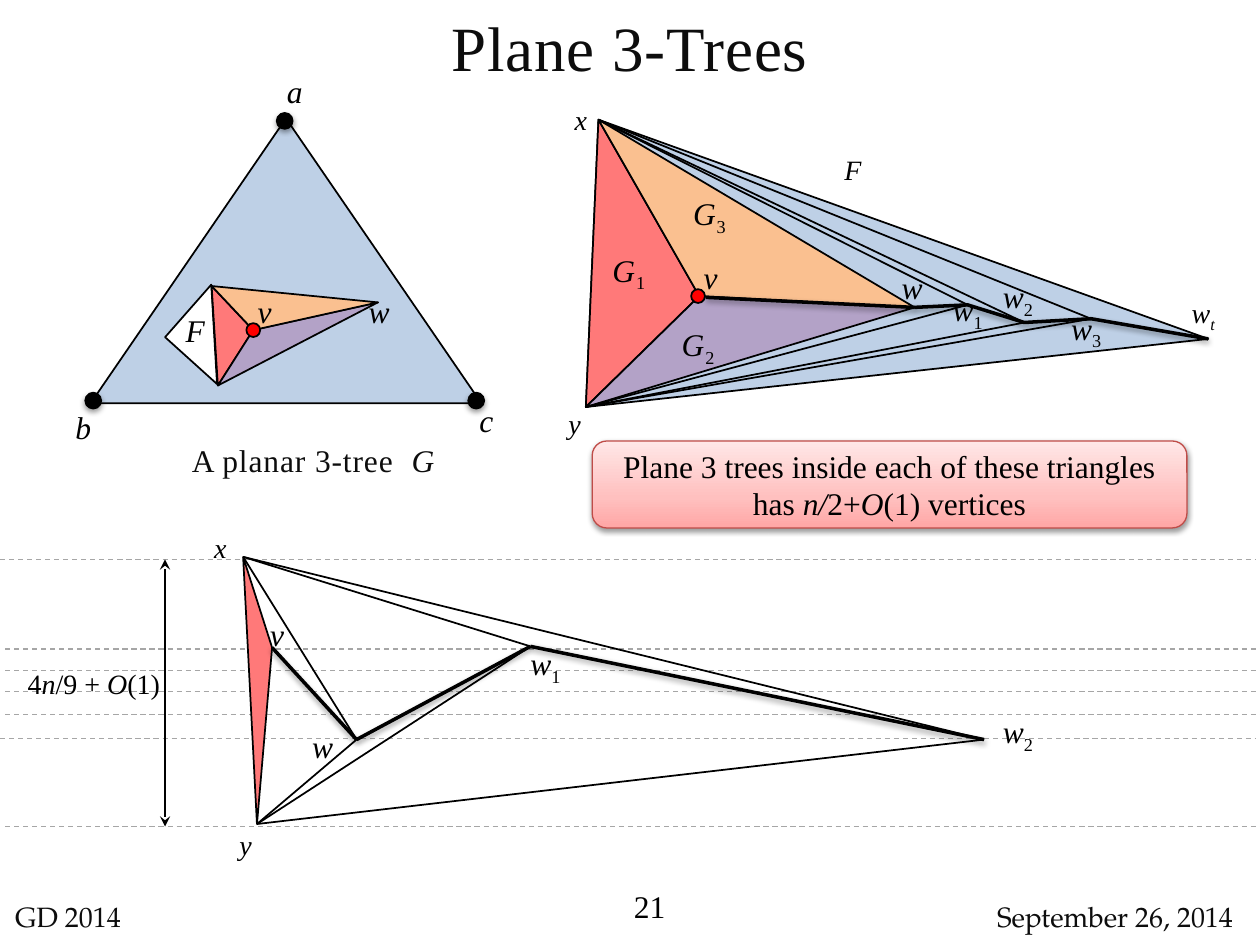
import lxml.etree
import pptx
import pptx.dml.color
import pptx.enum.dml
import pptx.enum.shapes
import pptx.enum.text
import pptx.oxml.ns
import pptx.util

W, H = 10, 7.5
SERIF, FOOTER = "Times New Roman", "TeX Gyre Pagella"
COLORS = {"black": "000000", "text": "0D0D0D", "dash": "A6A6A6", "blue": "4F81BD",
          "rose": "FF7979", "purple": "B3A2C7", "orange": "FAC090", "red": "FF0000",
          "white": "FFFFFF", "box": "BF4C48"}
BOX_STOPS = [(0, "FFA6A5"), (35, "FFC0BF"), (100, "FFE7E7")]

# (left end, height) of the dashed guide lines, all 9.96 long
GUIDES = [(0, 4.44), (0.04, 5.15), (0.04, 5.32), (0.04, 5.49), (0.04, 5.67),
          (0, 5.86), (0.04, 6.56)]

# Vertices: small tree, large face, layered drawing
SMALL = {"x": (1.68, 2.27), "y": (1.73, 3.06), "v": (2.01, 2.62), "w": (3, 2.4)}
FACE = {"x": (4.75, 0.95), "y": (4.65, 3.23), "v": (5.55, 2.35), "w": (7.26, 2.44),
        "w1": (7.68, 2.42), "w2": (8.13, 2.56), "w3": (8.66, 2.53), "wt": (9.59, 2.69)}
LAYERED = {"x": (1.93, 4.42), "y": (2.04, 6.54), "v": (2.16, 5.14), "w": (2.83, 5.87),
           "w1": (4.21, 5.13), "w2": (7.81, 5.87)}

FACES = [(SMALL, "y x v", "rose"), (SMALL, "v w y", "purple"), (SMALL, "v x w", "orange"),
         (FACE, "y x wt", "blue"), (FACE, "y x v", "rose"), (FACE, "v w y", "purple"),
         (FACE, "v x w", "orange"), (LAYERED, "y x v", "rose")]
THIN = [(FACE, "x w1"), (FACE, "x w2"), (FACE, "x w3"),
        (FACE, "y w1"), (FACE, "y w2"), (FACE, "y w3"),
        (LAYERED, "x w"), (LAYERED, "y w"), (LAYERED, "x w1"), (LAYERED, "y w1"),
        (LAYERED, "x w2"), (LAYERED, "y w2")]
THICK = [(LAYERED, "v w"), (LAYERED, "w w1"), (LAYERED, "w1 w2")]

CORNERS = [(2.26, 0.96), (0.74, 3.18), (3.78, 3.18)]
INNER = [(2.01, 2.62), (5.54, 2.35)]

# (letter, subscript, left, top), grouped by box size and text size
LABELS = {
    (0.38, 0.25, 18): [("a", "", 2.15, 0.6), ("b", "", 0.47, 3.26), ("c", "", 3.67, 3.21)],
    (0.3, 0.2, 18): [("v", "", 1.95, 2.37), ("v", "", 5.49, 2.1), ("v", "", 2.05, 4.93),
                     ("F", "", 1.4, 2.52)],
    (0.3, 0.2, 16): [("F", "", 6.62, 1.24), ("x", "", 4.46, 0.85), ("y", "", 4.41, 3.26),
                     ("x", "", 1.6, 4.24), ("y", "", 1.8, 6.6)],
    (0.54, 0.3, 18): [("w", "", 2.74, 2.32), ("w", "", 6.97, 2.13), ("w", "1", 7.41, 2.32),
                      ("w", "2", 7.81, 2.22), ("w", "3", 8.35, 2.47), ("w", "", 2.29, 5.77),
                      ("w", "1", 4.06, 5.13), ("w", "2", 7.81, 5.67)],
    (0.54, 0.25, 16): [("w", "t", 9.28, 2.37)],
    (0.48, 0.4, 18): [("G", "1", 4.75, 1.96), ("G", "3", 5.39, 1.51), ("G", "2", 5.3, 2.55)],
}
# Runs are (text, style); style letters: i italic, b below the baseline
CALLOUT = [("Plane 3 trees inside each of these triangles has ", ""), ("n/", "i"),
           ("2+", ""), ("O", "i"), ("(1) vertices", "")]
HEIGHT = [("4", ""), ("n", "i"), ("/9 + ", ""), ("O", "i"), ("(1)", "")]
CAPTION = [("A planar 3-tree\u00a0 ".replace("\u00a0", " "), ""), ("G", "i")]

KIND = pptx.enum.shapes.MSO_SHAPE
ALIGN = pptx.enum.text.PP_ALIGN
inch = pptx.util.Inches
qn = pptx.oxml.ns.qn

prs = pptx.Presentation()
prs.slide_width, prs.slide_height = inch(W), inch(H)
s = prs.slides.add_slide(prs.slide_layouts[6])


def rgb(name):
    return pptx.dml.color.RGBColor.from_string(COLORS[name])


def sub(parent, tag, **attrs):
    return lxml.etree.SubElement(parent, qn(tag), {k: str(v) for k, v in attrs.items()})


def effects(sp, shadow):
    """Replace the theme's shadow by a soft one below, or by none."""
    spPr = sp._element.spPr
    lst = spPr.find(qn("a:effectLst"))
    if lst is None:
        lst = sub(spPr, "a:effectLst")
    if shadow:
        outer = sub(lst, "a:outerShdw", blurRad=40000, dist=20000, dir=5400000, rotWithShape=0)
        sub(sub(outer, "a:srgbClr", val=COLORS["black"]), "a:alpha", val=38000)


def paint(sp, fill=None, line="black", width=1, shadow=False):
    if fill:
        sp.fill.solid()
        sp.fill.fore_color.rgb = rgb(fill)
        if fill == "blue":
            sub(sp._element.spPr.find(".//" + qn("a:srgbClr")), "a:alpha", val=37000)
    else:
        sp.fill.background()
    if line:
        sp.line.color.rgb = rgb(line)
        sp.line.width = pptx.util.Pt(width)
    else:
        sp.line.fill.background()
    sp.shadow.inherit = False
    effects(sp, shadow)
    return sp


def shape(kind, x, y, w, h):
    return s.shapes.add_shape(kind, inch(x), inch(y), inch(w), inch(h))


def dot(center, size, fill, width, shadow=False):
    x, y = center
    paint(shape(KIND.OVAL, x - size / 2, y - size / 2, size, size), fill, "black", width, shadow)


def outline(points, close=True):
    (x, y), *rest = [(inch(px), inch(py)) for px, py in points]
    fb = s.shapes.build_freeform(x, y)
    fb.add_line_segments(rest, close=close)
    return fb.convert_to_shape()


def edge(start, end, color="black", width=1, shadow=False):
    ln = s.shapes.add_connector(pptx.enum.shapes.MSO_CONNECTOR.STRAIGHT,
                                *map(inch, (*start, *end)))
    ln.line.color.rgb = rgb(color)
    ln.line.width = pptx.util.Pt(width)
    effects(ln, shadow)
    return ln


def write(sp, runs, size=18, color="black", font=SERIF, align=ALIGN.CENTER, spacing=0,
          margin=0.1, wrap=True):
    tf = sp.text_frame
    tf.word_wrap = wrap
    tf.margin_left = tf.margin_right = inch(margin)
    tf.vertical_anchor = pptx.enum.text.MSO_ANCHOR.MIDDLE
    p = tf.paragraphs[0]
    p.alignment = align
    for text, style in runs:
        r = p.add_run()
        r.text = text
        r.font.name, r.font.size = font, pptx.util.Pt(size)
        r.font.color.rgb = rgb(color)
        r.font.italic = "i" in style
        rPr = r._r.get_or_add_rPr()
        if "b" in style:
            rPr.set("baseline", "-25000")
        if spacing:
            rPr.set("spc", str(spacing))


def textbox(x, y, w, h, runs, **style):
    write(s.shapes.add_textbox(inch(x), inch(y), inch(w), inch(h)), runs, **style)


for x, y in GUIDES:
    guide = edge((x, y), (x + 9.96, y), "dash", 0.75)
    guide.line.dash_style = pptx.enum.dml.MSO_LINE.DASH

paint(shape(KIND.ISOSCELES_TRIANGLE, 0.72, 0.94, 3.1, 2.26), "blue")
paint(shape(KIND.ISOSCELES_TRIANGLE, 1.11, 2.47, 0.79, 0.39), "white").rotation = 266.7
for graph, names, fill in FACES:
    paint(outline([graph[n] for n in names.split()]), fill)
for graph, names in THIN:
    edge(*[graph[n] for n in names.split()])
for graph, names in THICK:
    edge(*[graph[n] for n in names.split()], width=2, shadow=True)
paint(outline([FACE[n] for n in ("w", "w1", "w2", "w3", "wt")], close=False),
      width=2, shadow=True)
edge((5.6, 2.36), FACE["w"], width=2, shadow=True)
for center in CORNERS:
    dot(center, 0.13, "black", 0.75, True)
for center in INNER:
    dot(center, 0.11, "red", 1)

arrow = edge((1.31, 4.44), (1.31, 6.56), width=0.75)
for end in ("a:headEnd", "a:tailEnd"):
    sub(arrow._element.spPr.find(qn("a:ln")), end, type="stealth")

callout = paint(shape(KIND.ROUNDED_RECTANGLE, 4.7, 3.5, 4.72, 0.69), None, "box", 0.75, True)
callout.fill.gradient()
callout.fill.gradient_angle = 90
stops = callout._element.spPr.find(".//" + qn("a:gsLst"))
stops.clear()
for pos, color in BOX_STOPS:
    sub(sub(stops, "a:gs", pos=pos * 1000), "a:srgbClr", val=color)
write(callout, CALLOUT)

for (w, h, size), labels in LABELS.items():
    for letter, below, x, y in labels:
        runs = [(letter, "i")]
        if below:
            runs.append((below, "b" if below.isdigit() else "ib"))
        textbox(x, y, w, h, runs, size=size, margin=0, spacing=50 if letter == "G" else 0)

textbox(0, 0.01, W, 0.71, [("Plane 3-Trees", "")], size=36, color="text", spacing=50)
textbox(1.41, 3.45, 2.15, 0.4, CAPTION, color="text", spacing=50, wrap=False)
textbox(0.08, 4.83, 1.33, 1.18, HEIGHT, size=16)
textbox(3.05, 6.99, 2.33, 0.4, [("21", "")], align=ALIGN.RIGHT)
for x, w, text, align in [(0, 1.54, "GD 2014", ALIGN.LEFT),
                          (7.7, 2.3, "September 26, 2014", ALIGN.CENTER)]:
    footer = paint(shape(KIND.ROUNDED_RECTANGLE, x, 7.05, w, 0.45), line=None)
    write(footer, [(text, "")], size=16, color="text", font=FOOTER, align=align)

prs.save("out.pptx")
